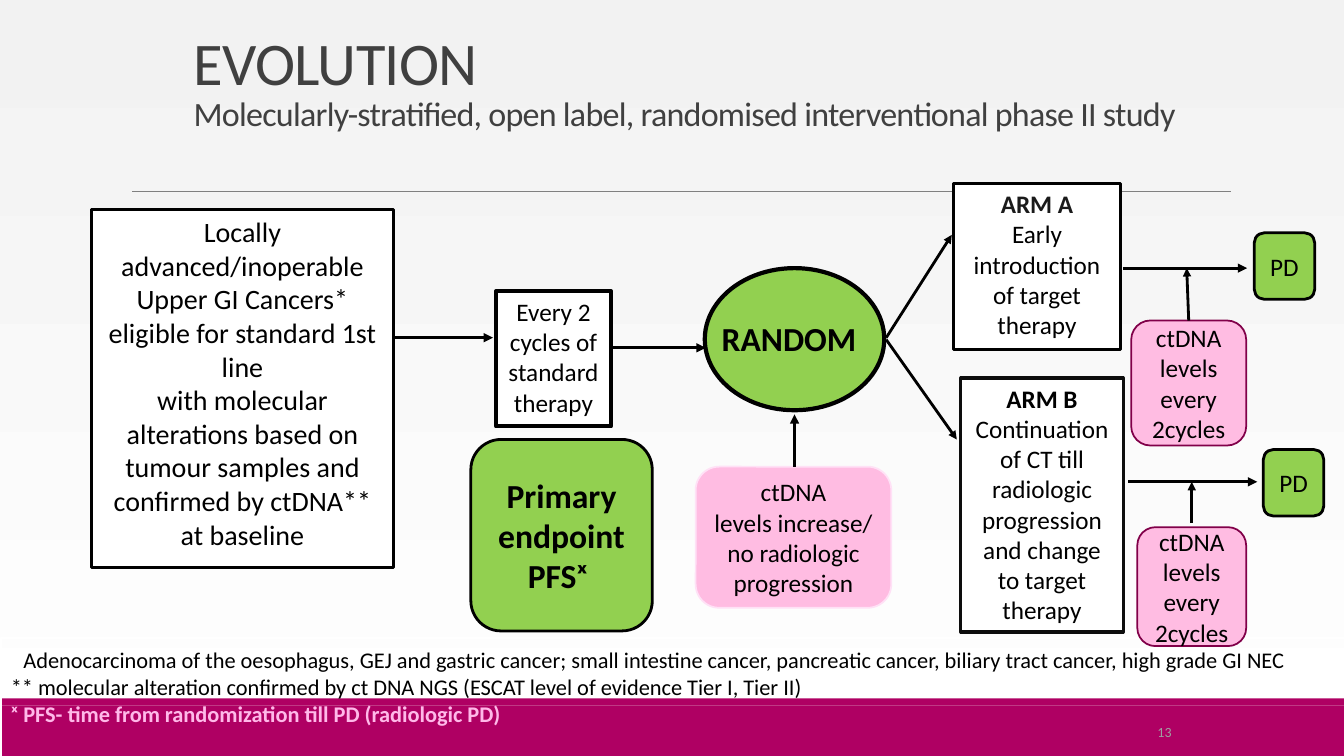
import pptx
import pptx.dml.color
import pptx.enum.shapes
import pptx.enum.text
import pptx.oxml.ns
import pptx.util
from lxml import etree

Inches = pptx.util.Inches
Pt = pptx.util.Pt
RGBColor = pptx.dml.color.RGBColor
Shape = pptx.enum.shapes.MSO_SHAPE
Align = pptx.enum.text.PP_ALIGN
Anchor = pptx.enum.text.MSO_ANCHOR

BLACK = RGBColor(0x00, 0x00, 0x00)
NEAR_BLACK = RGBColor(0x0D, 0x0D, 0x0D)
ARM_A_TEXT = RGBColor(0x1A, 0x1A, 0x1A)
WHITE = RGBColor(0xFF, 0xFF, 0xFF)
PALE_GREY = RGBColor(0xF2, 0xF2, 0xF2)
NUMBER_GREY = RGBColor(0x9F, 0xA0, 0xA1)
RULE_GREY = RGBColor(0x80, 0x80, 0x80)
TITLE_GREY = RGBColor(0x40, 0x40, 0x40)
MAGENTA = RGBColor(0xAF, 0x00, 0x63)
PLUM = RGBColor(0x81, 0x00, 0x49)
PINK = RGBColor(0xFF, 0xBC, 0xE2)
PALE_PINK = RGBColor(0xFF, 0xE1, 0xF6)
FOOTNOTE_PINK = RGBColor(0xFF, 0xB9, 0xE9)
GREEN = RGBColor(0x92, 0xD0, 0x50)
FONT = "Calibri"


def add_run(paragraph, text, size=18, color=BLACK, bold=False, spacing=None):
    run = paragraph.add_run()
    run.text = text
    run.font.name = FONT
    run.font.size = Pt(size)
    run.font.bold = bold
    run.font.color.rgb = color
    if spacing is not None:
        run.font._element.set("spc", str(int(spacing * 100)))


def write_text(shape, paragraphs, align=Align.CENTER, anchor=Anchor.TOP, **defaults):
    """Fill a shape; each paragraph is a string or a list of (text, format) runs."""
    frame = shape.text_frame
    frame.word_wrap = True
    frame.vertical_anchor = anchor
    for index, runs in enumerate(paragraphs):
        paragraph = frame.add_paragraph() if index else frame.paragraphs[0]
        paragraph.alignment = align
        for text, style in [(runs, {})] if isinstance(runs, str) else runs:
            add_run(paragraph, text, **{**defaults, **style})


def add_box(slide, box, kind=Shape.RECTANGLE, fill=None, line=None, weight=2.25):
    shape = slide.shapes.add_shape(kind, *map(Inches, box))
    shape.shadow.inherit = False
    if fill is None:
        shape.fill.background()
    else:
        shape.fill.solid()
        shape.fill.fore_color.rgb = fill
    if line is None:
        shape.line.fill.background()
    else:
        shape.line.color.rgb = line
        shape.line.width = Pt(weight)
    return shape


def add_text_box(slide, box, paragraphs, **style):
    write_text(slide.shapes.add_textbox(*map(Inches, box)), paragraphs, **style)


def add_line(slide, start, end, color=BLACK, weight=2.25, arrow=True):
    line = slide.shapes.add_connector(
        pptx.enum.shapes.MSO_CONNECTOR.STRAIGHT, *map(Inches, start + end))
    line.line.color.rgb = color
    line.line.width = Pt(weight)
    qn = pptx.oxml.ns.qn
    if arrow:
        etree.SubElement(line.line._get_or_add_ln(), qn("a:tailEnd"), type="triangle")
    etree.SubElement(line._element.spPr, qn("a:effectLst"))


def add_backdrop(slide, width, height):
    fill = slide.background.fill
    fill.gradient()
    fill.gradient_angle = 270
    for stop, position, color in zip(fill.gradient_stops, (0, 1), (PALE_GREY, WHITE)):
        stop.position = position
        stop.color.rgb = color
    band_top = height - 0.5
    add_box(slide, (0, band_top, width, 0.5), fill=MAGENTA)
    add_box(slide, (0, band_top - 0.07, width, 0.07), fill=MAGENTA)
    add_line(slide, (1.31, 1.9), (12.21, 1.9), RULE_GREY, 0.5, arrow=False)
    add_text_box(slide, (10.83, band_top + 0.06, 1.44, 0.4), ["13"],
                 anchor=Anchor.MIDDLE, size=10, color=NUMBER_GREY)


def add_title(slide, box):
    title = slide.shapes.title
    title.left, title.top, title.width, title.height = map(Inches, box)
    frame = title.text_frame
    frame.auto_size = pptx.enum.text.MSO_AUTO_SIZE.NONE
    frame.margin_bottom = Inches(0.17)
    style = {"color": TITLE_GREY, "spacing": -0.5}
    write_text(title, ["EVOLUTION"], align=Align.LEFT, anchor=Anchor.BOTTOM,
               size=43.2, **style)
    paragraph = frame.paragraphs[0]
    paragraph.line_spacing = 0.85
    paragraph.add_line_break()
    add_run(paragraph, "Molecularly-stratified, open label, randomised "
            "interventional phase II study", size=24.3, **style)


def add_enrolment(slide, left, top):
    """Patient population, standard therapy and the primary endpoint."""
    population = add_box(slide, (left, top, 2.99, 3.55), fill=WHITE, line=BLACK)
    write_text(population, [
        "Locally advanced/inoperable Upper GI Cancers* eligible for standard 1st line",
        "with molecular alterations based on tumour samples and confirmed by "
        "ctDNA** at baseline"], size=20)
    therapy = add_box(slide, (left + 4.01, top + 0.81, 1.14, 1.34),
                      fill=WHITE, line=BLACK, weight=3)
    write_text(therapy, ["Every 2 cycles of standard therapy"])
    endpoint = add_box(slide, (left + 3.76, top + 2.28, 1.8, 1.9),
                       Shape.ROUNDED_RECTANGLE, GREEN, BLACK, 2)
    write_text(endpoint, ["Primary endpoint", "PFSˣ "],
               anchor=Anchor.MIDDLE, size=24, bold=True)
    add_line(slide, (left + 3, top + 1.27), (left + 3.98, top + 1.27))
    add_line(slide, (left + 5.15, top + 1.37), (left + 6.09, top + 1.37))


def add_randomisation(slide, left, top):
    """Randomisation ellipse, its ctDNA trigger and the arrows to both arms."""
    add_box(slide, (left, top, 1.78, 1.41), Shape.OVAL, GREEN, BLACK, 3)
    add_text_box(slide, (left + 0.07, top + 0.44, 1.7, 0.5), ["RANDOM"],
                 align=Align.LEFT, size=24, bold=True)
    trigger = add_box(slide, (left - 0.09, top + 1.97, 1.94, 1.4),
                      Shape.ROUNDED_RECTANGLE, PINK, PALE_PINK, 1.25)
    write_text(trigger, ["ctDNA", "levels increase/ no radiologic progression"],
               anchor=Anchor.MIDDLE)
    middle = left + 0.89
    add_line(slide, (middle, top + 1.97), (middle, top + 1.45))
    add_line(slide, (left + 1.8, top + 0.69), (left + 2.45, top - 0.33), weight=2)
    add_line(slide, (left + 1.8, top + 0.71), (left + 2.5, top + 1.7), weight=2)


def add_arm(slide, box, name, treatment, outline, name_color,
            arrow, monitor, monitor_text, monitor_arrow, progression):
    """One study arm with its ctDNA monitoring and its end at PD."""
    arm = add_box(slide, box, fill=WHITE, line=outline)
    write_text(arm, [[(name, {"bold": True, "color": name_color})], treatment])
    add_line(slide, *arrow)
    monitoring = add_box(slide, monitor, Shape.ROUNDED_RECTANGLE, PINK, PLUM, 1.25)
    write_text(monitoring, monitor_text, anchor=Anchor.MIDDLE)
    add_line(slide, *monitor_arrow, weight=2)
    end = add_box(slide, progression + (0.6, 0.66),
                  Shape.ROUNDED_RECTANGLE, GREEN, BLACK, 2)
    write_text(end, ["PD"], anchor=Anchor.MIDDLE)


def add_footnotes(slide, box):
    notes = add_box(slide, box, line=WHITE, weight=1.5)
    write_text(notes, [
        [("*", {"size": 18, "color": WHITE}),
         ("Adenocarcinoma of the oesophagus, GEJ and gastric cancer; small intestine "
          "cancer, pancreatic cancer, biliary tract cancer, high grade GI NEC", {})],
        "** molecular alteration confirmed by ct DNA NGS "
        "(ESCAT level of evidence Tier I, Tier II)",
        [("ˣ PFS- time from randomization till PD (radiologic PD)",
          {"color": FOOTNOTE_PINK, "bold": True})],
    ], align=Align.LEFT, size=16)


def main():
    presentation = pptx.Presentation()
    width, height = 13.33, 7.5
    presentation.slide_width = Inches(width)
    presentation.slide_height = Inches(height)
    slide = presentation.slides.add_slide(presentation.slide_layouts[5])
    add_backdrop(slide, width, height)
    add_title(slide, (1.82, 0.93, 10.3, 0.56))
    add_footnotes(slide, (0.01, 6.33, width, 1.21))
    add_enrolment(slide, 0.91, 2.08)
    add_randomisation(slide, 6.99, 2.66)
    add_arm(slide, (9.46, 1.82, 1.65, 1.65), "ARM A",
            "Early introduction of target therapy", BLACK, ARM_A_TEXT,
            arrow=((11.14, 2.66), (12.37, 2.66)),
            monitor=(11.22, 3.18, 1.14, 1.24),
            monitor_text=["ctDNA", "levels", "every 2cycles"],
            monitor_arrow=((11.79, 3.18), (11.77, 2.66)),
            progression=(12.44, 2.31))
    add_arm(slide, (9.53, 3.75, 1.61, 2.52), "ARM B",
            "Continuation of CT till radiologic progression and change to target therapy",
            NEAR_BLACK, BLACK,
            arrow=((11.19, 4.78), (12.47, 4.78)),
            monitor=(11.28, 5.23, 1.08, 1.18),
            monitor_text=["ctDNA", "levels every 2cycles"],
            monitor_arrow=((11.82, 5.19), (11.82, 4.78)),
            progression=(12.53, 4.46))
    presentation.save("out.pptx")


if __name__ == "__main__":
    main()
